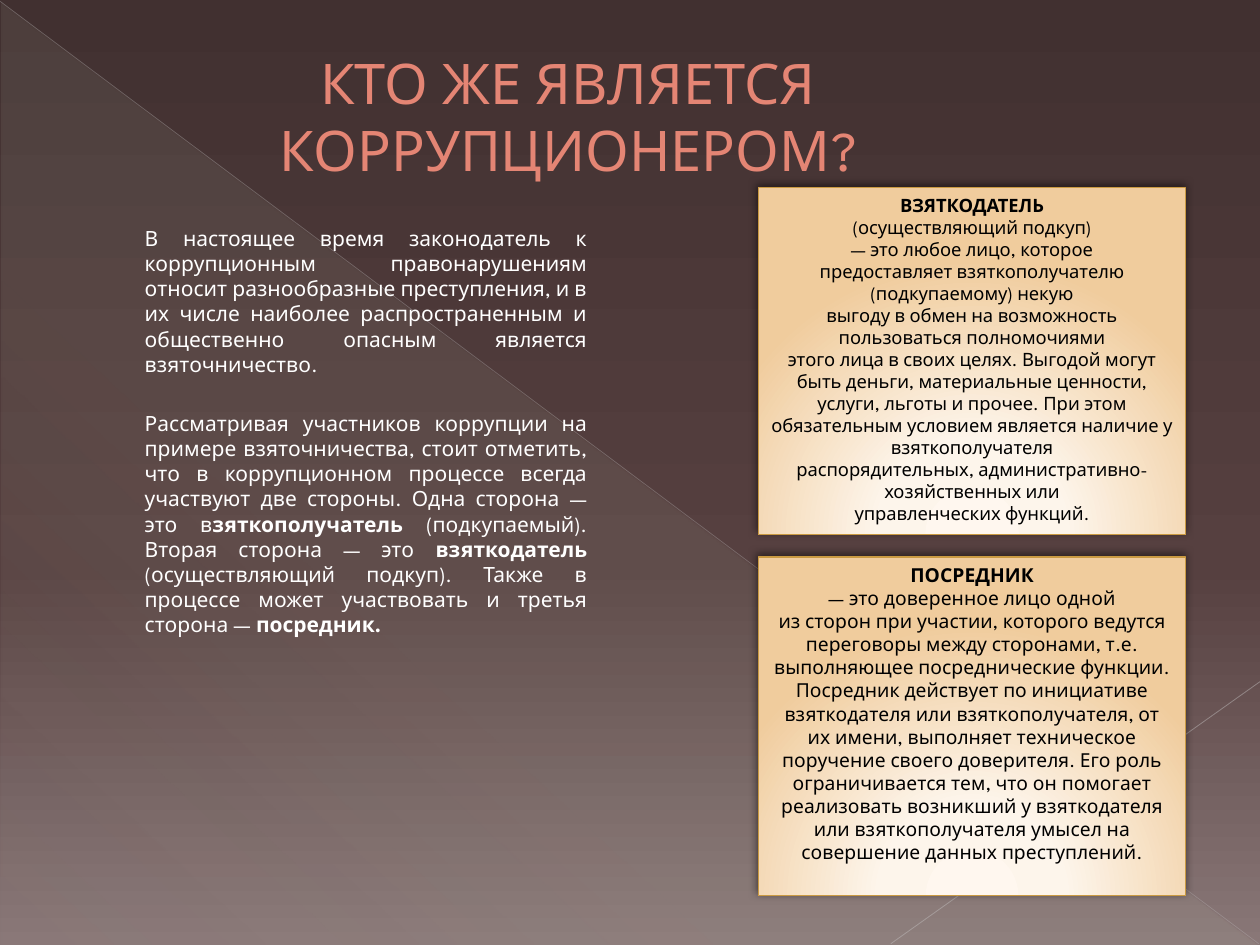
import pptx
import pptx.util
import pptx.dml.color
import pptx.enum.shapes
import pptx.enum.text
import pptx.oxml
import pptx.oxml.ns
from pptx.util import Inches

FONT = "League Spartan"
COLORS = {
    "title": "E48574", "body": "FFFFFF", "card_text": "000000", "card_line": "CA9A42",
    "ray_long": "BCB9B9", "ray_short": "C3C0C0",
}
BACKGROUND = [(0, "413030", 100), (60, "564040", 100), (100, "897777", 100)]
CORNER = [(0, "CCD1B9", 10), (70, "CCD1B9", 8), (100, "CCD1B9", 1)]
GLOW = [(0, "FFF7EF", 100), (34, "FDF5EB", 100), (100, "F0CC9D", 100)]
LINEAR = '<a:lin ang="{}" scaled="0"/>'
RADIAL = ('<a:path path="circle"><a:fillToRect l="50000" t="155000" '
          'r="50000" b="-55000"/></a:path>')
SHADOW = ('<a:effectLst {}><a:outerShdw blurRad="63500" dist="25400" dir="14700000" '
          'rotWithShape="0"><a:srgbClr val="000000"><a:alpha val="50000"/></a:srgbClr>'
          '</a:outerShdw></a:effectLst>')

TITLE = "КТО ЖЕ ЯВЛЯЕТСЯ КОРРУПЦИОНЕРОМ?"
BODY = [
    [("В настоящее время законодатель к коррупционным правонарушениям относит "
      "разнообразные преступления, и в их числе наиболее распространенным и "
      "общественно опасным является взяточничество.", False)],
    [("Рассматривая участников коррупции на примере взяточничества, стоит отметить, "
      "что в коррупционном процессе всегда участвуют две стороны. Одна сторона — "
      "это в", False),
     ("зяткополучатель ", True),
     ("(подкупаемый). Вторая сторона — это ", False),
     ("взяткодатель", True),
     (" (осуществляющий подкуп). Также в процессе может участвовать и третья "
      "сторона — ", False),
     ("посредник.", True)],
]
CARDS = [
    (1.49, 2.75, 10.5, "ВЗЯТКОДАТЕЛЬ", [
        "(осуществляющий подкуп)",
        "— это любое лицо, которое",
        "предоставляет взяткополучателю (подкупаемому) некую",
        "выгоду в обмен на возможность",
        "пользоваться полномочиями",
        "этого лица в своих целях. Выгодой могут быть деньги, материальные ценности, "
        "услуги, льготы и прочее. При этом обязательным условием является наличие у "
        "взяткополучателя",
        "распорядительных, административно-хозяйственных или",
        "управленческих функций."]),
    (4.42, 2.69, 11, "ПОСРЕДНИК", [
        "— это доверенное лицо одной",
        "из сторон при участии, которого ведутся переговоры между сторонами, т.е. "
        "выполняющее посреднические функции. Посредник действует по инициативе "
        "взяткодателя или взяткополучателя, от их имени, выполняет техническое "
        "поручение своего доверителя. Его роль ограничивается тем, что он помогает",
        "реализовать возникший у взяткодателя или взяткополучателя умысел на "
        "совершение данных преступлений."]),
]


def rgb(name):
    """Return the named colour."""
    return pptx.dml.color.RGBColor.from_string(COLORS[name])


def set_gradient(props, stops, direction):
    """Replace the solid fill of a properties element with a gradient."""
    gs = "".join(f'<a:gs pos="{pos * 1000}"><a:srgbClr val="{color}">'
                 f'<a:alpha val="{alpha * 1000}"/></a:srgbClr></a:gs>'
                 for pos, color, alpha in stops)
    xml = (f'<a:gradFill {pptx.oxml.ns.nsdecls("a")} rotWithShape="1">'
           f'<a:gsLst>{gs}</a:gsLst>{direction}</a:gradFill>')
    solid = props.find(pptx.oxml.ns.qn("a:solidFill"))
    props.replace(solid, pptx.oxml.parse_xml(xml))


def set_background(s):
    """Give the slide its vertical gradient."""
    s.background.fill.solid()
    props = s.element.find(".//" + pptx.oxml.ns.qn("p:bgPr"))
    set_gradient(props, BACKGROUND, LINEAR.format(90 * 60000))


def add_rect(s, kind, box, stops, direction):
    """Add a gradient-filled preset shape."""
    sp = s.shapes.add_shape(kind, *map(Inches, box))
    sp.shadow.inherit = False
    sp.fill.solid()
    set_gradient(sp.element.spPr, stops, direction)
    return sp


def add_ray(s, ends, color, width, alpha):
    """Add a thin translucent line."""
    ray = s.shapes.add_connector(pptx.enum.shapes.MSO_CONNECTOR.STRAIGHT,
                                 *map(Inches, ends))
    ray.line.width = pptx.util.Pt(width)
    ray.line.color.rgb = rgb(color)
    spPr = ray._element.spPr
    clr = spPr.find(".//" + pptx.oxml.ns.qn("a:srgbClr"))
    pptx.oxml.ns.qn("a:alpha")
    clr.append(pptx.oxml.parse_xml(
        f'<a:alpha {pptx.oxml.ns.nsdecls("a")} val="{alpha * 1000}"/>'))
    spPr.append(pptx.oxml.parse_xml(f'<a:effectLst {pptx.oxml.ns.nsdecls("a")}/>'))


def fill_text(tf, paragraphs, align, size, color, indent=0, gap=0):
    """Write paragraphs made of (text, bold) runs."""
    tf.word_wrap = True
    for i, runs in enumerate(paragraphs):
        p = tf.add_paragraph() if i else tf.paragraphs[0]
        p.alignment = align
        p.space_before = pptx.util.Pt(gap if i else 0)
        p._p.get_or_add_pPr().set("marL", str(Inches(indent)))
        p._p.get_or_add_pPr().set("indent", "0")
        for text, bold in runs:
            r = p.add_run()
            r.text = text
            formats = {"name": FONT, "size": pptx.util.Pt(size), "bold": bold}
            for name, value in formats.items():
                setattr(r.font, name, value)
            r.font.color.rgb = rgb(color)


def add_title(s):
    """Place and format the title placeholder above the decoration."""
    sp = s.shapes.title
    s.shapes.element.append(sp.element)
    places = {"left": 0.5, "top": 0.29, "width": 7.49, "height": 1.25}
    for name, value in places.items():
        setattr(sp, name, Inches(value))
    sp.text_frame.vertical_anchor = pptx.enum.text.MSO_ANCHOR.MIDDLE
    fill_text(sp.text_frame, [[(TITLE, False)]], pptx.enum.text.PP_ALIGN.CENTER,
              32, "title", indent=0.53)


def add_body(s):
    """Add the justified explanation."""
    sp = s.shapes.add_textbox(*map(Inches, (0.98, 1.74, 3.78, 5)))
    fill_text(sp.text_frame, BODY, pptx.enum.text.PP_ALIGN.JUSTIFY,
              12, "body", indent=0.07, gap=19.3)


def add_card(s, top, height, size, heading, lines):
    """Add a glowing card with a bold heading."""
    sp = add_rect(s, pptx.enum.shapes.MSO_SHAPE.RECTANGLE,
                  (6.02, top, 3.39, height), GLOW, RADIAL)
    sp.line.color.rgb = rgb("card_line")
    sp.line.width = pptx.util.Pt(0.75)
    spPr = sp.element.spPr
    spPr.replace(spPr.find(pptx.oxml.ns.qn("a:effectLst")),
                 pptx.oxml.parse_xml(SHADOW.format(pptx.oxml.ns.nsdecls("a"))))
    sp.text_frame.vertical_anchor = pptx.enum.text.MSO_ANCHOR.TOP
    paragraphs = [[(heading, True)]] + [[(line, False)] for line in lines]
    fill_text(sp.text_frame, paragraphs, pptx.enum.text.PP_ALIGN.CENTER,
              size, "card_text")


def main():
    """Build the slide and save it."""
    prs = pptx.Presentation()
    prs.slide_width, prs.slide_height = Inches(10), Inches(7.5)
    s = prs.slides.add_slide(prs.slide_layouts[5])
    set_background(s)
    corner = add_rect(s, pptx.enum.shapes.MSO_SHAPE.RIGHT_TRIANGLE,
                      (0.01, 0.02, 9.98, 7.48), CORNER, LINEAR.format(133 * 60000))
    corner.line.fill.background()
    add_ray(s, (0, 0.01, 9.99, 7.49), "ray_long", 0.39, 35)
    add_ray(s, (10, 5.41, 7.07, 7.49), "ray_short", 0.47, 45)
    add_title(s)
    add_body(s)
    for card in CARDS:
        add_card(s, *card)
    prs.save("out.pptx")


if __name__ == "__main__":
    main()
